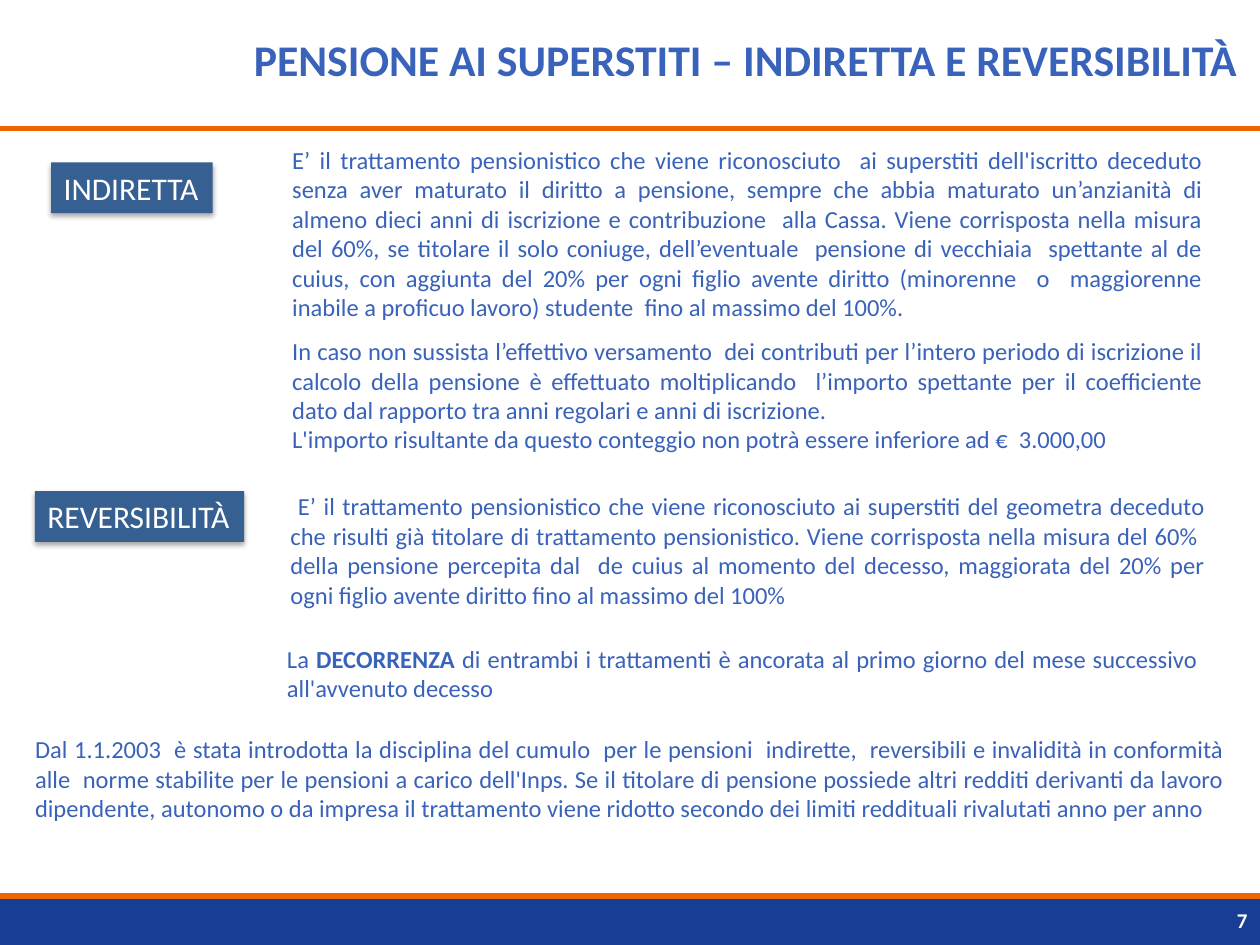
from dataclasses import dataclass

from lxml.etree import SubElement
from pptx import Presentation
from pptx.dml.color import RGBColor
from pptx.enum.shapes import MSO_CONNECTOR as Connector
from pptx.enum.shapes import MSO_SHAPE as Shape
from pptx.enum.text import MSO_ANCHOR as Anchor
from pptx.enum.text import MSO_AUTO_SIZE as AutoSize
from pptx.enum.text import PP_ALIGN as Align
from pptx.oxml.ns import qn
from pptx.util import Pt

BLUE = RGBColor(0x39, 0x62, 0xBA)
NAVY = RGBColor(0x18, 0x3D, 0x95)
STEEL = RGBColor(0x37, 0x60, 0x92)
ORANGE = RGBColor(0xEC, 0x67, 0x01)
WHITE = RGBColor(0xFF, 0xFF, 0xFF)

FONT = "Calibri"
PAGE_WIDTH, PAGE_HEIGHT = 720, 540
HEADER_LINE, FOOTER_TOP = 73.5, 512
LABEL_HEIGHT = 29
PARAGRAPH_GAP = 8.5


@dataclass
class Span:
    text: str
    bold: bool = False


@dataclass
class Paragraph:
    spans: list[Span]
    space_before: float = 0


@dataclass
class TextBlock:
    left: float
    top: float
    width: float
    height: float
    paragraphs: list[Paragraph]


@dataclass
class Label:
    text: str
    left: float
    top: float
    width: float


BLOCKS = [
    TextBlock(167, 82.8, 520.5, 183, [
        Paragraph([Span(
            "E’ il trattamento pensionistico che viene riconosciuto  ai superstiti "
            "dell'iscritto deceduto senza aver maturato il diritto a pensione, sempre che "
            "abbia maturato un’anzianità di almeno dieci anni di iscrizione e contribuzione  "
            "alla Cassa. Viene corrisposta nella misura del 60%, se titolare il solo coniuge, "
            "dell’eventuale  pensione di vecchiaia  spettante al de cuius, con aggiunta del "
            "20% per ogni figlio avente diritto (minorenne  o  maggiorenne inabile a proficuo "
            "lavoro) studente  fino al massimo del 100%.")]),
        Paragraph([Span(
            "In caso non sussista l’effettivo versamento  dei contributi per l’intero periodo "
            "di iscrizione il calcolo della pensione è effettuato moltiplicando  l’importo "
            "spettante per il coefficiente dato dal rapporto tra anni regolari e anni di "
            "iscrizione.")], PARAGRAPH_GAP),
        Paragraph([Span(
            "L'importo risultante da questo conteggio non potrà essere inferiore ad "
            "€  3.000,00")]),
    ]),
    TextBlock(166, 280.8, 523, 85, [
        Paragraph([Span(
            " E’ il trattamento pensionistico che viene riconosciuto ai superstiti del "
            "geometra deceduto che risulti già titolare di trattamento pensionistico. Viene "
            "corrisposta nella misura del 60%  della pensione percepita dal  de cuius al "
            "momento del decesso, maggiorata del 20% per ogni figlio avente diritto fino al "
            "massimo del 100%")]),
    ]),
    TextBlock(164, 368, 520.5, 34, [
        Paragraph([
            Span("La "),
            Span("DECORRENZA", bold=True),
            Span(" di entrambi i trattamenti è ancorata al primo giorno del mese successivo "
                 "all'avvenuto decesso"),
        ]),
    ]),
    TextBlock(20, 419.6, 680, 68.5, [
        Paragraph([Span(
            "Dal 1.1.2003  è stata introdotta la disciplina del cumulo  per le pensioni  "
            "indirette,  reversibili e invalidità in conformità alle  norme stabilite per le "
            "pensioni a carico dell'Inps. Se il titolare di pensione possiede altri redditi "
            "derivanti da lavoro dipendente, autonomo o da impresa il trattamento viene "
            "ridotto secondo dei limiti reddituali rivalutati anno per anno")]),
    ]),
]

LABELS = [
    Label("INDIRETTA", 29.3, 92.8, 92.3),
    Label("REVERSIBILITÀ", 20, 280.6, 119.5),
]


def style(para, size: float, color: RGBColor, align: Align, bold: bool = False) -> None:
    para.alignment = align
    font = para.font
    font.name, font.size, font.bold = FONT, Pt(size), bold
    font.color.rgb = color


def add_rectangle(page, left: float, top: float, width: float, height: float, fill: RGBColor):
    box = page.shapes.add_shape(Shape.RECTANGLE, Pt(left), Pt(top), Pt(width), Pt(height))
    box.shadow.inherit = False
    box.fill.solid()
    box.fill.fore_color.rgb = fill
    box.line.fill.background()
    return box


def add_rule(page, top: float) -> None:
    rule = page.shapes.add_connector(Connector.STRAIGHT, 0, Pt(top), Pt(PAGE_WIDTH), Pt(top))
    rule.line.color.rgb = ORANGE
    rule.line.width = Pt(3)
    SubElement(rule._element.spPr, qn("a:effectLst"))


def add_drop_shadow(box) -> None:
    effects = box._element.spPr.find(qn("a:effectLst"))
    shadow = SubElement(effects, qn("a:outerShdw"), blurRad=str(Pt(3.1)), dist=str(Pt(1.8)),
                        dir="5400000", rotWithShape="0")
    color = SubElement(shadow, qn("a:srgbClr"), val="000000")
    SubElement(color, qn("a:alpha"), val="35000")


def add_label(page, label: Label) -> None:
    box = add_rectangle(page, label.left, label.top, label.width, LABEL_HEIGHT, STEEL)
    add_drop_shadow(box)
    frame = box.text_frame
    frame.word_wrap = False
    frame.vertical_anchor = Anchor.TOP
    frame.text = label.text
    style(frame.paragraphs[0], 18, WHITE, Align.LEFT)


def add_text_block(page, block: TextBlock) -> None:
    box = page.shapes.add_textbox(Pt(block.left), Pt(block.top), Pt(block.width), Pt(block.height))
    frame = box.text_frame
    frame.word_wrap = True
    frame.margin_left = frame.margin_top = frame.margin_right = frame.margin_bottom = 0
    for index, paragraph in enumerate(block.paragraphs):
        para = frame.add_paragraph() if index else frame.paragraphs[0]
        style(para, 14, BLUE, Align.JUSTIFY)
        if paragraph.space_before:
            para.space_before = Pt(paragraph.space_before)
        for span in paragraph.spans:
            run = para.add_run()
            run.text = span.text
            if span.bold:
                run.font.bold = True


def set_title(page, text: str) -> None:
    title = page.shapes.title
    title.left, title.top, title.width, title.height = Pt(90), Pt(0), Pt(624), Pt(68)
    frame = title.text_frame
    frame.text = text
    frame.auto_size = AutoSize.NONE
    frame.vertical_anchor = Anchor.MIDDLE
    style(frame.paragraphs[0], 25, BLUE, Align.RIGHT, bold=True)


def add_page_number(page, number: str) -> None:
    box = page.shapes.add_textbox(Pt(552), Pt(511.5), Pt(168), Pt(28.5))
    frame = box.text_frame
    frame.word_wrap = True
    frame.vertical_anchor = Anchor.MIDDLE
    frame.text = number
    style(frame.paragraphs[0], 12, WHITE, Align.RIGHT, bold=True)


def main() -> None:
    deck = Presentation()
    deck.slide_width, deck.slide_height = Pt(PAGE_WIDTH), Pt(PAGE_HEIGHT)
    page = deck.slides.add_slide(deck.slide_layouts[5])

    # Header and footer
    add_rectangle(page, 0, FOOTER_TOP, PAGE_WIDTH, PAGE_HEIGHT - FOOTER_TOP, NAVY)
    for top in (FOOTER_TOP, HEADER_LINE):
        add_rule(page, top)
    set_title(page, "PENSIONE AI SUPERSTITI – INDIRETTA E REVERSIBILITÀ")
    add_page_number(page, "7")

    # Body text and its side labels
    for block in BLOCKS:
        add_text_block(page, block)
    for label in LABELS:
        add_label(page, label)

    deck.save("out.pptx")


if __name__ == "__main__":
    main()
